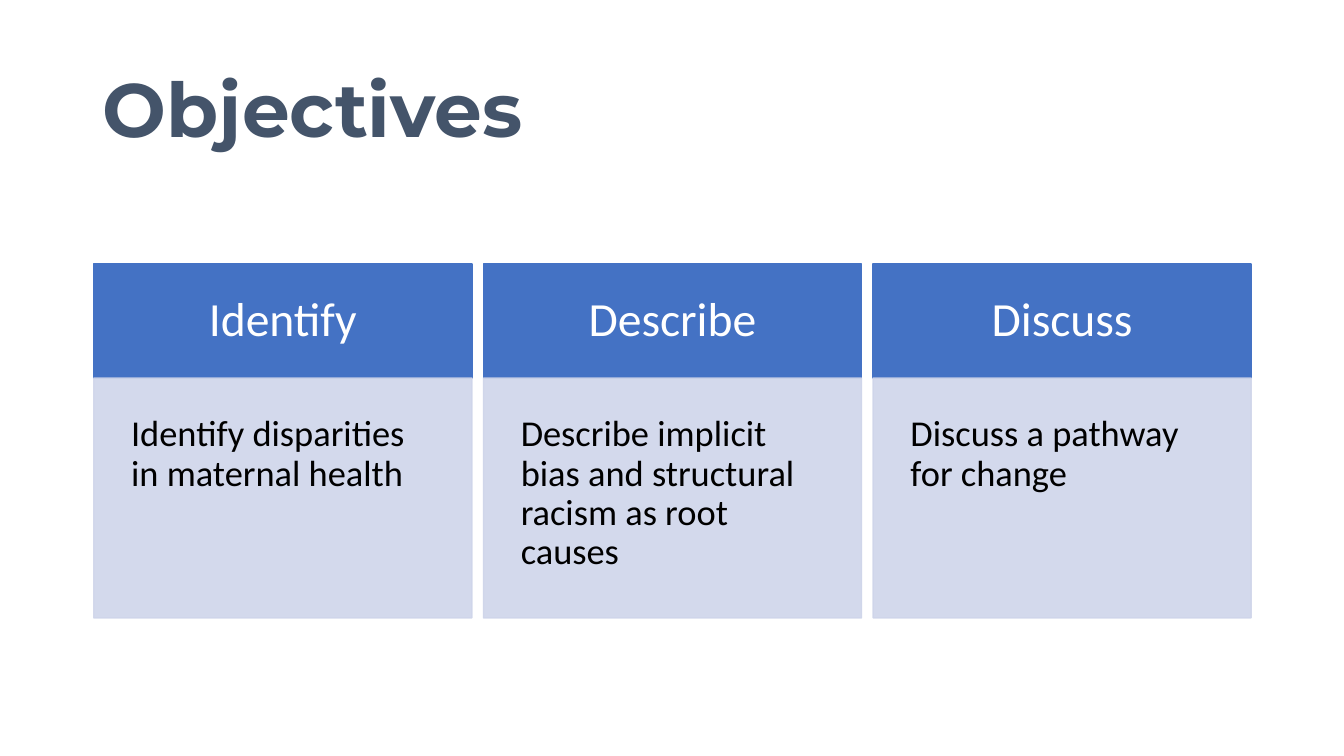
from dataclasses import dataclass

from lxml.etree import SubElement
from pptx import Presentation
from pptx.dml.color import RGBColor
from pptx.enum.shapes import MSO_SHAPE
from pptx.enum.text import MSO_ANCHOR, PP_ALIGN
from pptx.oxml.ns import qn
from pptx.shapes.autoshape import Shape
from pptx.slide import Slide
from pptx.text.text import TextFrame
from pptx.util import Inches, Pt


@dataclass(frozen=True)
class Theme:
    title_font: str = "Montserrat"
    body_font: str = "Calibri"
    title_color: str = "44546A"
    header_fill: str = "4472C4"
    header_text: str = "FFFFFF"
    detail_fill: str = "CFD5EA"
    detail_text: str = "000000"
    title_size: int = 54
    header_size: int = 34
    detail_size: int = 26
    detail_opacity: int = 90


@dataclass(frozen=True)
class Objective:
    header: str
    detail: str


THEME = Theme()
OBJECTIVES = [
    Objective("Identify", "Identify disparities in maternal health"),
    Objective("Describe", "Describe implicit bias and structural racism as root causes"),
    Objective("Discuss", "Discuss a pathway for change"),
]

# Column grid, in inches
COLUMN_LEFT, COLUMN_PITCH, COLUMN_WIDTH = 0.93, 3.865, 3.75
HEADER_TOP, HEADER_HEIGHT = 2.62, 1.13
DETAIL_HEIGHT = 2.38


def write_text(frame: TextFrame, text: str, *, font: str, size: int, color: str,
               bold: bool = False, align: PP_ALIGN = PP_ALIGN.LEFT,
               anchor: MSO_ANCHOR = MSO_ANCHOR.MIDDLE) -> None:
    frame.word_wrap = True
    frame.vertical_anchor = anchor
    para = frame.paragraphs[0]
    para.alignment = align
    para.line_spacing = 0.9
    span = para.add_run()
    span.text = text
    span.font.name = font
    span.font.size = Pt(size)
    span.font.bold = bold
    span.font.color.rgb = RGBColor.from_string(color)


def add_box(page: Slide, left: float, top: float, height: float, *, fill: str,
            inset: float, opacity: int = 100) -> Shape:
    box = page.shapes.add_shape(MSO_SHAPE.RECTANGLE, Inches(left), Inches(top),
                                Inches(COLUMN_WIDTH), Inches(height))
    box.shadow.inherit = False
    box.fill.solid()
    box.fill.fore_color.rgb = box.line.color.rgb = RGBColor.from_string(fill)
    box.line.width = Pt(1)
    if opacity < 100:
        for color in box.element.spPr.iter(qn("a:srgbClr")):
            SubElement(color, qn("a:alpha"), val=str(opacity * 1000))
    frame = box.text_frame
    frame.margin_left = frame.margin_right = Inches(inset)
    frame.margin_top = frame.margin_bottom = Inches(inset)
    return box


def add_objective(page: Slide, objective: Objective, left: float) -> None:
    header = add_box(page, left, HEADER_TOP, HEADER_HEIGHT,
                     fill=THEME.header_fill, inset=0.3)
    write_text(header.text_frame, objective.header, font=THEME.body_font,
               size=THEME.header_size, color=THEME.header_text, align=PP_ALIGN.CENTER)
    detail = add_box(page, left, HEADER_TOP + HEADER_HEIGHT, DETAIL_HEIGHT,
                     fill=THEME.detail_fill, inset=0.37, opacity=THEME.detail_opacity)
    write_text(detail.text_frame, objective.detail, font=THEME.body_font,
               size=THEME.detail_size, color=THEME.detail_text, anchor=MSO_ANCHOR.TOP)


def main() -> None:
    deck = Presentation()
    deck.slide_width, deck.slide_height = Inches(13.33), Inches(7.5)
    page = deck.slides.add_slide(deck.slide_layouts.get_by_name("Title Only"))

    # Title
    title = page.shapes.title
    title.left, title.top = Inches(0.92), Inches(0.4)
    title.width, title.height = Inches(11.5), Inches(1.45)
    write_text(title.text_frame, "Objectives", font=THEME.title_font,
               size=THEME.title_size, color=THEME.title_color, bold=True)

    # Objective columns
    for index, objective in enumerate(OBJECTIVES):
        add_objective(page, objective, COLUMN_LEFT + index * COLUMN_PITCH)

    deck.save("out.pptx")


if __name__ == "__main__":
    main()
